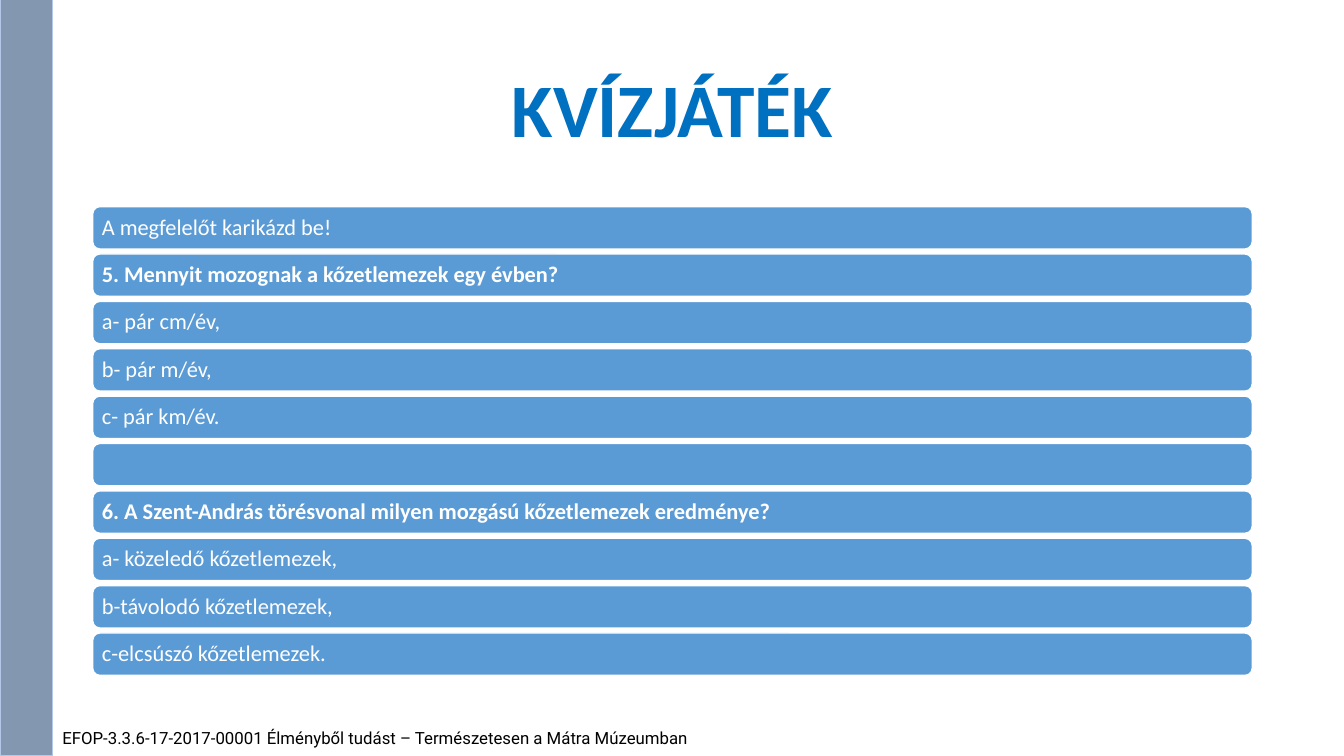
import pptx
import pptx.dml.color
import pptx.enum.shapes
import pptx.enum.text
import pptx.util

Inches = pptx.util.Inches
Pt = pptx.util.Pt
SHAPES = pptx.enum.shapes.MSO_SHAPE
ALIGN = pptx.enum.text.PP_ALIGN
ANCHOR = pptx.enum.text.MSO_ANCHOR

QUIZ_LINES = [
    ("A megfelelőt karikázd be!", False),
    ("5. Mennyit mozognak a kőzetlemezek egy évben?", True),
    ("a- pár cm/év,", False),
    ("b- pár m/év,", False),
    ("c- pár km/év.", False),
    ("", False),
    ("6. A Szent-András törésvonal milyen mozgású kőzetlemezek eredménye?", True),
    ("a- közeledő kőzetlemezek,", False),
    ("b-távolodó kőzetlemezek,", False),
    ("c-elcsúszó kőzetlemezek.", False),
]


def color(value):
    return pptx.dml.color.RGBColor.from_string(value)


def apply(target, values):
    for name, value in values.items():
        setattr(target, name, value)


def write(shape, text, hue, font, frame_format, para_format):
    frame = shape.text_frame
    apply(frame, {"word_wrap": True, **frame_format})
    if not text:
        return
    para = frame.paragraphs[0]
    apply(para, para_format)
    span = para.add_run()
    span.text = text
    apply(span.font, font)
    span.font.color.rgb = color(hue)


def add_block(page, kind, box, fill, line, width):
    block = page.shapes.add_shape(kind, *map(Inches, box))
    block.shadow.inherit = False
    block.fill.solid()
    block.fill.fore_color.rgb = color(fill)
    block.line.color.rgb = color(line)
    block.line.width = Pt(width)
    return block


def add_title(page, box):
    title = page.shapes.add_textbox(*map(Inches, box))
    write(title, "KVÍZJÁTÉK", "0070C0",
          {"name": "Calibri", "size": Pt(54), "bold": True},
          {"vertical_anchor": ANCHOR.MIDDLE},
          {"alignment": ALIGN.CENTER, "line_spacing": 0.9})


def add_quiz(page, box, bar_height=0.42):
    left, top, width, height = box
    pitch = (height - bar_height) / (len(QUIZ_LINES) - 1)
    for index, (text, bold) in enumerate(QUIZ_LINES):
        bar_box = (left, top + index * pitch, width, bar_height)
        bar = add_block(page, SHAPES.ROUNDED_RECTANGLE, bar_box, "5B9BD5", "FFFFFF", 1)
        write(bar, text, "FFFFFF",
              {"name": "Calibri", "size": Pt(16), "bold": bold},
              {"vertical_anchor": ANCHOR.MIDDLE,
               "margin_left": Inches(0.07), "margin_right": Inches(0.07),
               "margin_top": Inches(0.07), "margin_bottom": Inches(0.07)},
              {"alignment": ALIGN.LEFT, "line_spacing": 0.9})


def add_side_band(page, box):
    add_block(page, SHAPES.RECTANGLE, box, "8497B0", "B4C7E7", 0.75)


def add_footer(page, box):
    footer = page.shapes.add_textbox(*map(Inches, box))
    write(footer,
          "EFOP-3.3.6-17-2017-00001 Élményből tudást – Természetesen a Mátra Múzeumban",
          "000000", {"name": "Roboto", "size": Pt(12)}, {}, {"alignment": ALIGN.LEFT})


def main():
    deck = pptx.Presentation()
    deck.slide_width = Inches(13.33)
    deck.slide_height = Inches(7.5)
    page = deck.slides.add_slide(deck.slide_layouts[6])
    add_title(page, (0.92, 0.4, 11.5, 1.45))
    add_quiz(page, (0.92, 2.05, 11.5, 4.65))
    add_side_band(page, (0, 0, 0.52, 7.5))
    add_footer(page, (0.52, 7.17, 8.3, 0.33))
    deck.save("out.pptx")


if __name__ == "__main__":
    main()
